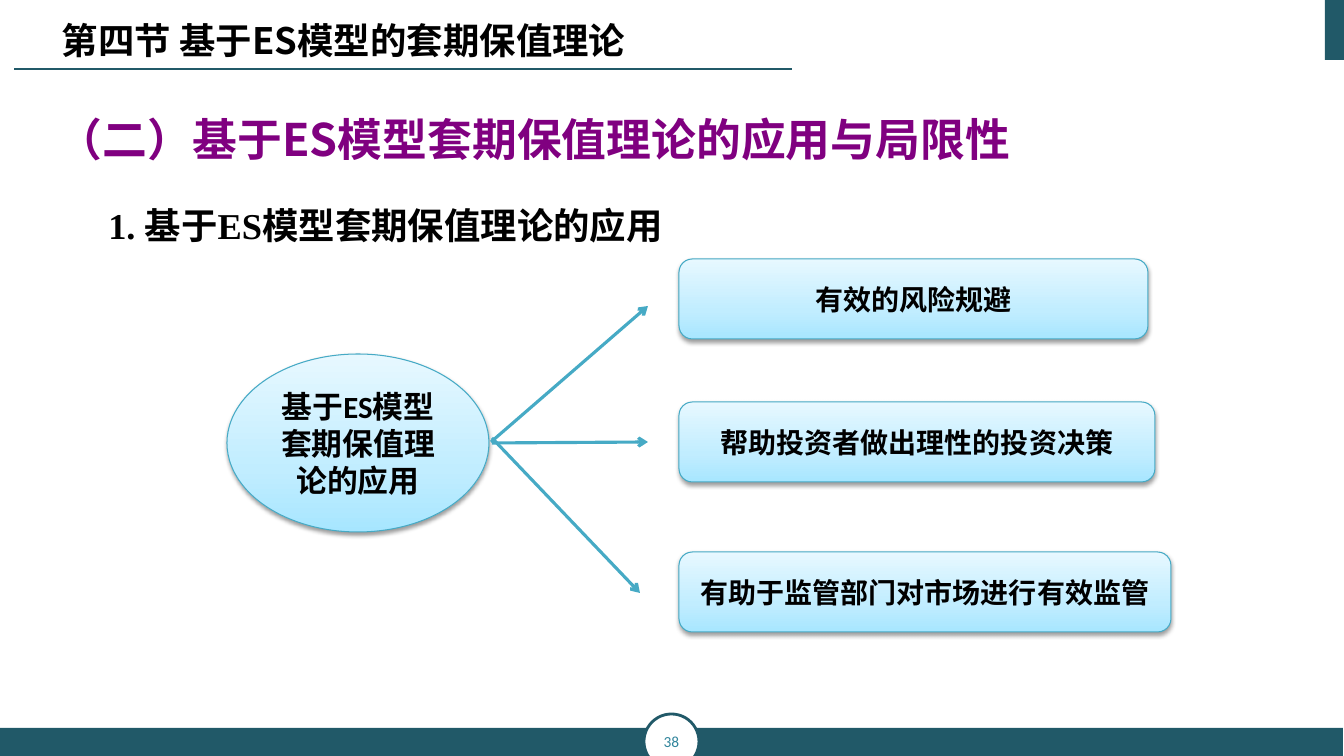
from copy import deepcopy

from lxml.etree import SubElement
from pptx import Presentation
from pptx.dml.color import RGBColor
from pptx.enum.shapes import MSO_CONNECTOR as Link, MSO_SHAPE as Preset
from pptx.enum.text import MSO_ANCHOR as Anchor, MSO_AUTO_SIZE as AutoSize, PP_ALIGN as Align
from pptx.oxml.ns import qn
from pptx.util import Pt

PX = 914400 / 100.8
TEAL = RGBColor(0x21, 0x59, 0x68)
AQUA = RGBColor(0x46, 0xAA, 0xC5)
PAGE_BLUE = RGBColor(0x31, 0x85, 0x9C)
PURPLE = RGBColor(0x80, 0x00, 0x80)
BLACK = RGBColor(0, 0, 0)
WHITE = RGBColor(0xFF, 0xFF, 0xFF)
SKY = ((0, RGBColor(0xA7, 0xE6, 0xFF)),
       (0.35, RGBColor(0xC1, 0xED, 0xFF)),
       (1, RGBColor(0xE7, 0xF8, 0xFF)))
CJK, LATIN, SERIF = "Noto Sans CJK SC", "Calibri", "Times New Roman"


def px(*lengths):
    return [round(length * PX) for length in lengths]


class SlideBuilder:
    """Draws the elements of one slide in a shared style."""

    def __init__(self, slide):
        self.shapes = slide.shapes

    def set_text(self, paragraph, text, size, color=BLACK, font=CJK, bold=True):
        paragraph.text = text
        for run in paragraph.runs:
            run.font.name, run.font.size = font, Pt(size)
            run.font.bold, run.font.color.rgb = bold, color
            latin = run.font._element.find(qn("a:latin"))
            east_asian = latin.makeelement(qn("a:ea"), {"typeface": CJK})
            latin.addnext(east_asian)

    def textbox(self, box):
        frame = self.shapes.add_textbox(*px(*box)).text_frame
        frame.word_wrap = True
        return frame

    def shape(self, preset, box, fill, line=None, weight=0):
        shape = self.shapes.add_shape(preset, *px(*box))
        shape.shadow.inherit = False
        shape.fill.solid()
        shape.fill.fore_color.rgb = fill
        if line is None:
            shape.line.fill.background()
        else:
            shape.line.color.rgb, shape.line.width = line, Pt(weight)
        return shape

    def label(self, shape, text, size, **style):
        frame = shape.text_frame
        frame.word_wrap, frame.vertical_anchor = True, Anchor.MIDDLE
        frame.paragraphs[0].alignment = Align.CENTER
        self.set_text(frame.paragraphs[0], text, size, font=LATIN, **style)

    def glossy(self, preset, box, text, size):
        node = self.shape(preset, box, WHITE, AQUA, 0.75)
        node.fill.gradient()
        node.fill.gradient_angle = 90
        stop_list = node._element.spPr.find(".//" + qn("a:gsLst"))
        stop_list.append(deepcopy(stop_list[-1]))
        for stop, (position, color) in zip(node.fill.gradient_stops, SKY):
            stop.position, stop.color.rgb = position, color
        effects = node._element.spPr.find(qn("a:effectLst"))
        shadow = SubElement(effects, qn("a:outerShdw"), blurRad="40000",
                            dist="20000", dir="5400000", rotWithShape="0")
        tint = SubElement(shadow, qn("a:srgbClr"), val="000000")
        SubElement(tint, qn("a:alpha"), val="38000")
        self.label(node, text, size)

    def line(self, start, end, color, weight, arrow=False):
        link = self.shapes.add_connector(Link.STRAIGHT, *px(*start, *end))
        link.line.color.rgb, link.line.width = color, Pt(weight)
        if arrow:
            outline = link._element.spPr.find(qn("a:ln"))
            SubElement(outline, qn("a:tailEnd"), type="arrow")
        SubElement(link._element.spPr, qn("a:effectLst"))


def main():
    deck = Presentation()
    deck.slide_width, deck.slide_height = px(1344, 756)
    page = SlideBuilder(deck.slides.add_slide(deck.slide_layouts[6]))

    page.shape(Preset.RECTANGLE, (1325, 0, 20, 60), TEAL)
    page.shape(Preset.RECTANGLE, (0, 728, 1343, 28), TEAL)
    page_badge = page.shape(Preset.OVAL, (644, 714, 55, 55), WHITE, TEAL, 2)
    page.label(page_badge, "38", 11, color=PAGE_BLUE, bold=False)
    page.line((792, 69), (14, 69), TEAL, 1.5)

    headings = page.textbox((48, 69, 1262, 621))
    topic, subtopic = headings.paragraphs[0], headings.add_paragraph()
    page.set_text(topic, "（二）基于ES模型套期保值理论的应用与局限性", 32, PURPLE)
    page.set_text(subtopic, "1. 基于ES模型套期保值理论的应用", 26, font=SERIF)
    topic.line_spacing = subtopic.line_spacing = 1.7
    subtopic.space_before = Pt(5.2)
    subtopic._p.get_or_add_pPr().set("indent", "457200")

    section = page.textbox((52, 13, 786, 54))
    section.auto_size = AutoSize.SHAPE_TO_FIT_TEXT
    page.set_text(section.paragraphs[0], "第四节 基于ES模型的套期保值理论", 26)

    page.glossy(Preset.OVAL, (227, 354, 262, 178), "基于ES模型套期保值理论的应用", 22)
    applications = (
        ("有效的风险规避", 259, 469, (491, 442), (648, 306)),
        ("帮助投资者做出理性的投资决策", 402, 476, (492, 443), (648, 442)),
        ("有助于监管部门对市场进行有效监管", 552, 492, (492, 438), (640, 593)),
    )
    for text, top, width, start, end in applications:
        page.line(start, end, AQUA, 2.25, arrow=True)
        page.glossy(Preset.ROUNDED_RECTANGLE, (679, top, width, 80), text, 20)

    deck.save("out.pptx")


if __name__ == "__main__":
    main()
